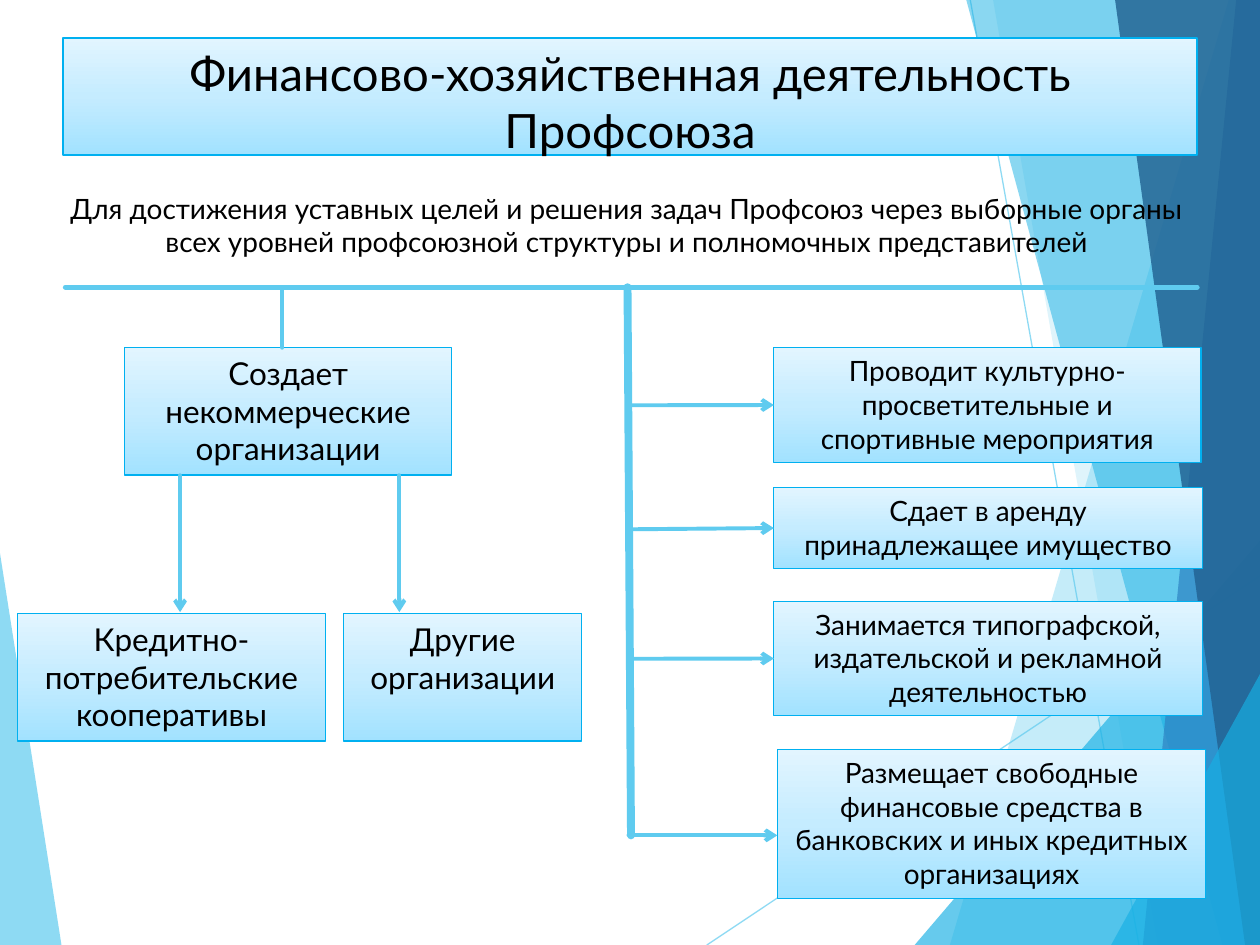
from typing import NamedTuple, Optional

from copy import deepcopy
from lxml.etree import SubElement
from pptx import Presentation
from pptx.dml.color import RGBColor
from pptx.enum.shapes import MSO_CONNECTOR as Conn, MSO_SHAPE as Shape
from pptx.enum.text import MSO_ANCHOR as Anchor, MSO_AUTO_SIZE as AutoSize, PP_ALIGN as Align
from pptx.oxml.ns import qn
from pptx.util import Cm, Pt

W, H = 25.4, 19.05
SKY = RGBColor(0x5F, 0xCB, 0xEF)
CYAN = RGBColor(0x17, 0xB0, 0xE4)
BLUE = RGBColor(0x2E, 0x83, 0xC3)
NAVY = RGBColor(0x22, 0x62, 0x92)
BORDER = RGBColor(0x00, 0xB0, 0xF0)
BLACK = RGBColor(0, 0, 0)
GRADIENT = [
    (0, RGBColor(0xA2, 0xE2, 0xFF)),
    (0.5, RGBColor(0xC5, 0xEC, 0xFF)),
    (1, RGBColor(0xE2, 0xF5, 0xFF)),
]
LEFT_SIDE = 1


class Facet(NamedTuple):
    points: list
    color: RGBColor
    opacity: int


class Box(NamedTuple):
    text: str
    x: float
    y: float
    w: float
    h: float
    size: int


class Line(NamedTuple):
    x1: float
    y1: float
    x2: float
    y2: float
    width: float = 2.25
    arrow: bool = False
    opacity: int = 100
    target: Optional[int] = None


def band(top: float, bottom: float) -> list:
    return [(top, 0), (bottom, H), (W, H), (W, 0)]


def corner(x: float, y: float) -> list:
    return [(x, H), (W, y), (W, H)]


FACETS = [
    Facet([(0, 11.15), (1.24, H), (0, H)], SKY, 70),
    Facet(band(24.77, 19.15), SKY, 36),
    Facet(band(20.02, 23.34), SKY, 20),
    Facet(corner(18.44, 10.9), CYAN, 66),
    Facet(band(19.48, 24.64), CYAN, 50),
    Facet(band(24.92, 23.04), BLUE, 70),
    Facet(band(22.48, 25.1), NAVY, 82),
    Facet(corner(22.4, 13.59), CYAN, 66),
]
RAYS = [
    Line(14.25, H, W, 11.61, 0.75, opacity=70),
    Line(19.56, 0, 22.96, H, 0.75, opacity=70),
]
TITLE = Box("Финансово-хозяйственная деятельность Профсоюза", 1.27, 0.76, 22.86, 2.36, 27)
INTRO = Box(
    "Для достижения уставных целей и решения задач Профсоюз через выборные органы "
    "всех уровней профсоюзной структуры и полномочных представителей",
    1.09, 3.73, 23.09, 1.63, 16,
)
BOXES = [
    Box("Проводит культурно-просветительные и спортивные мероприятия", 15.6, 7.01, 8.61, 2.31, 16),
    Box("Сдает в аренду принадлежащее имущество", 15.6, 9.83, 8.64, 1.63, 16),
    Box("Занимается типографской, издательской и рекламной деятельностью",
        15.6, 12.12, 8.64, 2.31, 16),
    Box("Размещает свободные финансовые средства в банковских и иных кредитных организациях",
        15.67, 15.11, 8.64, 3, 16),
    Box("Создает некоммерческие организации", 2.51, 7.01, 6.6, 2.57, 18),
    Box("Кредитно-потребительские кооперативы", 0.36, 12.37, 6.2, 2.57, 18),
    Box("Другие организации", 6.93, 12.37, 4.8, 2.57, 18),
]
LINES = [
    Line(12.65, 5.79, 12.72, 16.84, 4.5),
    Line(12.65, 8.17, 15.6, 8.17, arrow=True, target=0),
    Line(12.65, 10.67, 15.6, 10.64, arrow=True, target=1),
    Line(12.72, 13.28, 15.6, 13.28, arrow=True, target=2),
    Line(12.67, 16.84, 15.67, 16.84, arrow=True),
    Line(3.63, 9.58, 3.63, 12.34, arrow=True),
    Line(8.05, 9.58, 8.05, 12.34, arrow=True),
    Line(1.32, 5.79, 24.13, 5.79, 3),
    Line(5.69, 5.79, 5.69, 7.01),
]


def set_opacity(element, percent: int) -> None:
    for clr in element.iter(qn("a:srgbClr")):
        SubElement(clr, qn("a:alpha"), val=str(percent * 1000))


def draw_facet(s, facet: Facet) -> None:
    start, *rest = [(Cm(x), Cm(y)) for x, y in facet.points]
    builder = s.shapes.build_freeform(*start)
    builder.add_line_segments(rest)
    sp = builder.convert_to_shape()
    sp.shadow.inherit = False
    sp.fill.solid()
    sp.fill.fore_color.rgb = facet.color
    sp.line.fill.background()
    set_opacity(sp._element.spPr, facet.opacity)


def draw_line(s, line: Line, boxes: list):
    cxn = s.shapes.add_connector(
        Conn.STRAIGHT, Cm(line.x1), Cm(line.y1), Cm(line.x2), Cm(line.y2))
    if line.target is not None:
        cxn.end_connect(boxes[line.target], LEFT_SIDE)
    cxn.line.color.rgb = SKY
    cxn.line.width = Pt(line.width)
    spPr = cxn._element.spPr
    ln = spPr.find(qn("a:ln"))
    ln.set("cap", "rnd")
    if line.opacity < 100:
        set_opacity(ln, line.opacity)
    if line.arrow:
        SubElement(ln, qn("a:tailEnd"), type="arrow")
    SubElement(spPr, qn("a:effectLst"))


def write_text(sp, box: Box, auto_size: AutoSize) -> None:
    tf = sp.text_frame
    frame_format = {"word_wrap": True, "auto_size": auto_size, "vertical_anchor": Anchor.TOP}
    for name, value in frame_format.items():
        setattr(tf, name, value)
    p = tf.paragraphs[0]
    p.alignment = Align.CENTER
    r = p.add_run()
    r.text = box.text
    for name, value in {"name": "Lato", "size": Pt(box.size)}.items():
        setattr(r.font, name, value)
    r.font.color.rgb = BLACK


def paint_panel(sp, border: float) -> None:
    sp.fill.gradient()
    sp.fill.gradient_angle = 90
    stops = sp._element.spPr.find(".//" + qn("a:gsLst"))
    stops.insert(1, deepcopy(stops[0]))
    for stop, (position, color) in zip(sp.fill.gradient_stops, GRADIENT):
        stop.position = position
        stop.color.rgb = color
    sp.line.color.rgb = BORDER
    sp.line.width = Pt(border)


def place(box: Box) -> dict:
    return {"left": Cm(box.x), "top": Cm(box.y), "width": Cm(box.w), "height": Cm(box.h)}


def draw_title(s) -> None:
    sp = s.shapes.title
    for name, value in place(TITLE).items():
        setattr(sp, name, value)
    paint_panel(sp, 1)
    write_text(sp, TITLE, AutoSize.NONE)
    s.shapes._spTree.append(sp._element)


def draw_box(s, box: Box):
    sp = s.shapes.add_shape(Shape.RECTANGLE, **place(box))
    sp.shadow.inherit = False
    paint_panel(sp, 0.75)
    write_text(sp, box, AutoSize.SHAPE_TO_FIT_TEXT)
    return sp


def main() -> None:
    prs = Presentation()
    prs.slide_width, prs.slide_height = Cm(W), Cm(H)
    s = prs.slides.add_slide(prs.slide_layouts[5])
    draw_facet(s, FACETS[0])
    for ray in RAYS:
        draw_line(s, ray, [])
    for facet in FACETS[1:]:
        draw_facet(s, facet)
    draw_title(s)
    boxes = [draw_box(s, box) for box in BOXES]
    for line in LINES:
        draw_line(s, line, boxes)
    write_text(s.shapes.add_textbox(**place(INTRO)), INTRO, AutoSize.SHAPE_TO_FIT_TEXT)
    prs.save("out.pptx")


if __name__ == "__main__":
    main()
